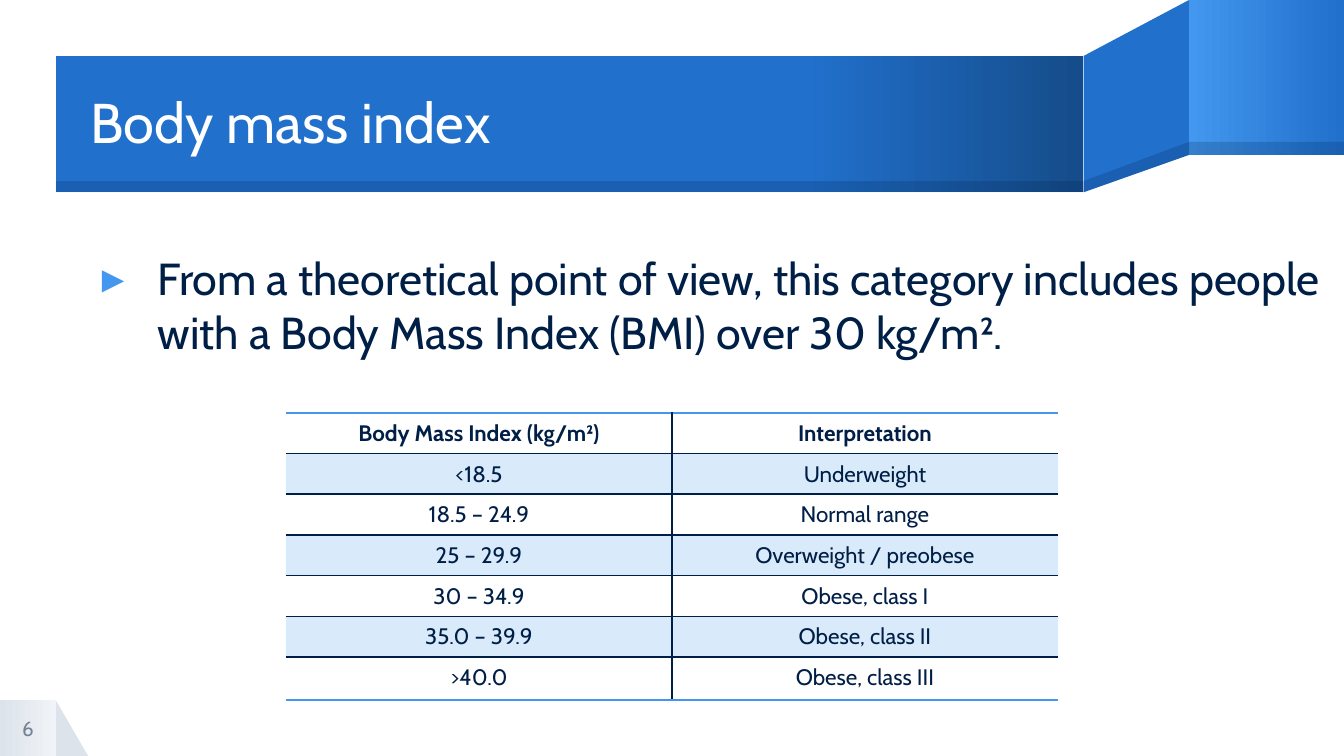
import copy
from dataclasses import dataclass

import lxml.etree
import pptx
import pptx.dml.color
import pptx.enum.shapes
import pptx.enum.text
import pptx.oxml.ns
import pptx.util

Pt = pptx.util.Pt
RGB = pptx.dml.color.RGBColor.from_string
qn = pptx.oxml.ns.qn
SHAPE = pptx.enum.shapes.MSO_SHAPE
ALIGN = pptx.enum.text.PP_ALIGN
ANCHOR = pptx.enum.text.MSO_ANCHOR


@dataclass(frozen=True)
class Theme:
    font: str = "Cabin"
    navy: str = "001F46"
    blue: str = "2170CC"
    deep: str = "154C8A"
    sky: str = "4397EE"
    gray: str = "DDE3EB"
    pale: str = "F0F3F7"
    slate: str = "748394"
    white: str = "FFFFFF"
    title: int = 30
    body: int = 24
    table: int = 12
    number: int = 11
    tint: int = 20


def add_xml(parent, tag, **attrs):
    return lxml.etree.SubElement(parent, qn(tag), attrs)


class SlideBuilder:
    def __init__(self, slide, theme):
        self.s, self.t = slide, theme

    def solid(self, fill, color, alpha=None):
        fill.solid()
        fill.fore_color.rgb = RGB(color)
        if alpha is not None:
            clr = fill._xPr.find(f"{qn('a:solidFill')}/{qn('a:srgbClr')}")
            add_xml(clr, "a:alpha", val=str(alpha * 1000))

    def gradient(self, fill, stops):
        """Fill left to right with (percent, colour) stops."""
        fill.gradient()
        fill.gradient_angle = 0
        gs_list = fill._xPr.find(f"{qn('a:gradFill')}/{qn('a:gsLst')}")
        while len(gs_list) < len(stops):
            gs_list.append(copy.deepcopy(gs_list[-1]))
        for stop, (percent, color) in zip(fill.gradient_stops, stops):
            stop.color.rgb = RGB(color)
            stop.position = percent / 100

    def paint(self, sp, fill, alpha=None):
        sp.shadow.inherit = False
        sp.line.fill.background()
        if isinstance(fill, str):
            self.solid(sp.fill, fill, alpha)
        else:
            self.gradient(sp.fill, fill)

    def shape(self, kind, box, fill, alpha=None):
        self.paint(self.s.shapes.add_shape(kind, *map(Pt, box)), fill, alpha)

    def polygon(self, points, fill, alpha=None):
        first, *rest = [(Pt(x), Pt(y)) for x, y in points]
        builder = self.s.shapes.build_freeform(*first)
        builder.add_line_segments(rest, close=True)
        self.paint(builder.convert_to_shape(), fill, alpha)

    def style(self, p, size, color, align=ALIGN.LEFT, bold=False):
        p.alignment = align
        for r in p.runs:
            r.font.name, r.font.size, r.font.bold = self.t.font, Pt(size), bold
            r.font.color.rgb = RGB(color)

    def text(self, box, text, size, color, anchor=ANCHOR.MIDDLE, align=ALIGN.LEFT):
        tf = self.s.shapes.add_textbox(*map(Pt, box)).text_frame
        tf.word_wrap = True
        tf.vertical_anchor = anchor
        tf.margin_left = tf.margin_top = tf.margin_right = tf.margin_bottom = 0
        tf.text = text
        self.style(tf.paragraphs[0], size, color, align)
        return tf.paragraphs[0]

    def bullet(self, box, text):
        p = self.text(box, text, self.t.body, self.t.navy, ANCHOR.TOP)
        pPr = p._p.get_or_add_pPr()
        pPr.set("marL", str(Pt(36)))
        pPr.set("indent", str(Pt(-30)))
        add_xml(add_xml(pPr, "a:buClr"), "a:srgbClr", val=self.t.sky)
        add_xml(pPr, "a:buFont", typeface=self.t.font)
        add_xml(pPr, "a:buChar", char="▸")

    def borders(self, cell, colors):
        """Draw the L, R, T and B edges; None leaves an edge clear."""
        tcPr = cell._tc.get_or_add_tcPr()
        for i, (side, color) in enumerate(colors.items()):
            ln = lxml.etree.Element(qn(f"a:ln{side}"), w=str(Pt(1)))
            if color:
                add_xml(add_xml(ln, "a:solidFill"), "a:srgbClr", val=color)
            else:
                add_xml(ln, "a:noFill")
            tcPr.insert(i, ln)

    def table(self, box, rows, heights):
        t = self.t
        last_row, last_col = len(rows) - 1, len(rows[0]) - 1
        frame = self.s.shapes.add_table(len(rows), len(rows[0]), *map(Pt, box))
        table = frame.table
        table.first_row = table.horz_banding = False
        for i, row in enumerate(rows):
            table.rows[i].height = Pt(heights[i])
            for j, text in enumerate(row):
                cell = table.cell(i, j)
                cell.margin_top = cell.margin_bottom = Pt(3.6)
                cell.text = text
                self.style(cell.text_frame.paragraphs[0], t.table, t.navy,
                           ALIGN.CENTER, bold=i == 0)
                if i % 2:
                    self.solid(cell.fill, t.sky, t.tint)
                else:
                    cell.fill.background()
                self.borders(cell, {
                    "L": t.navy if j > 0 else None,
                    "R": t.navy if j < last_col else None,
                    "T": t.navy if i > 0 else t.sky,
                    "B": t.navy if i < last_row else t.sky,
                })


def main():
    prs = pptx.Presentation()
    prs.slide_width, prs.slide_height = Pt(720), Pt(405)
    t = Theme()
    b = SlideBuilder(prs.slides.add_slide(prs.slide_layouts[6]), t)

    # Page number corner
    corner = (0, 375, 30, 30)
    b.shape(SHAPE.RIGHT_TRIANGLE, (29.8, 375, 17.4, 30), t.gray)
    b.shape(SHAPE.RECTANGLE, corner, [(0, t.gray), (100, t.pale)])

    # Folded title ribbon: band, fold and far end, each with a shaded lower edge
    left, fold, end, right = 30, 580.5, 637, 720
    band_top, band_shade, band_bottom = 30, 97, 103
    end_shade, end_bottom = 76, 83
    b.polygon([(end, 0), (fold, band_top), (fold, band_bottom), (end, end_bottom)], t.blue)
    b.shape(SHAPE.RECTANGLE, (end, 0, right - end, end_bottom),
            [(0, t.sky), (100, t.blue)])
    b.shape(SHAPE.RECTANGLE, (left, band_top, fold - left, band_bottom - band_top),
            [(0, t.blue), (73, t.blue), (100, t.deep)])
    b.polygon([(end, end_shade), (fold, band_shade), (fold, band_bottom), (end, end_bottom)],
              t.navy, t.tint)
    b.shape(SHAPE.RECTANGLE, (end, end_shade, right - end, end_bottom - end_shade),
            t.navy, t.tint)
    b.shape(SHAPE.RECTANGLE, (left, band_shade, fold - left, band_bottom - band_shade),
            t.navy, t.tint)

    title = b.text((48.5, 30.6, 532, 73), "Body mass index", t.title, t.white)
    title.line_spacing = 0.9
    b.bullet((48.5, 134.5, 663, 222),
             "From a theoretical point of view, this category includes people "
             "with a Body Mass Index (BMI) over 30 kg/m².")
    b.text(corner, "6", t.number, t.slate, align=ALIGN.CENTER)

    rows = [
        ("Body Mass Index (kg/m²)", "Interpretation"),
        ("<18.5", "Underweight"),
        ("18.5 – 24.9", "Normal range"),
        ("25 – 29.9", "Overweight / preobese"),
        ("30 – 34.9", "Obese, class I"),
        ("35.0 – 39.9", "Obese, class II"),
        (">40.0", "Obese, class III"),
    ]
    heights = [21.8] * 6 + [23]
    b.table((153.2, 221.2, 413.6, sum(heights)), rows, heights)

    prs.save("out.pptx")


if __name__ == "__main__":
    main()
